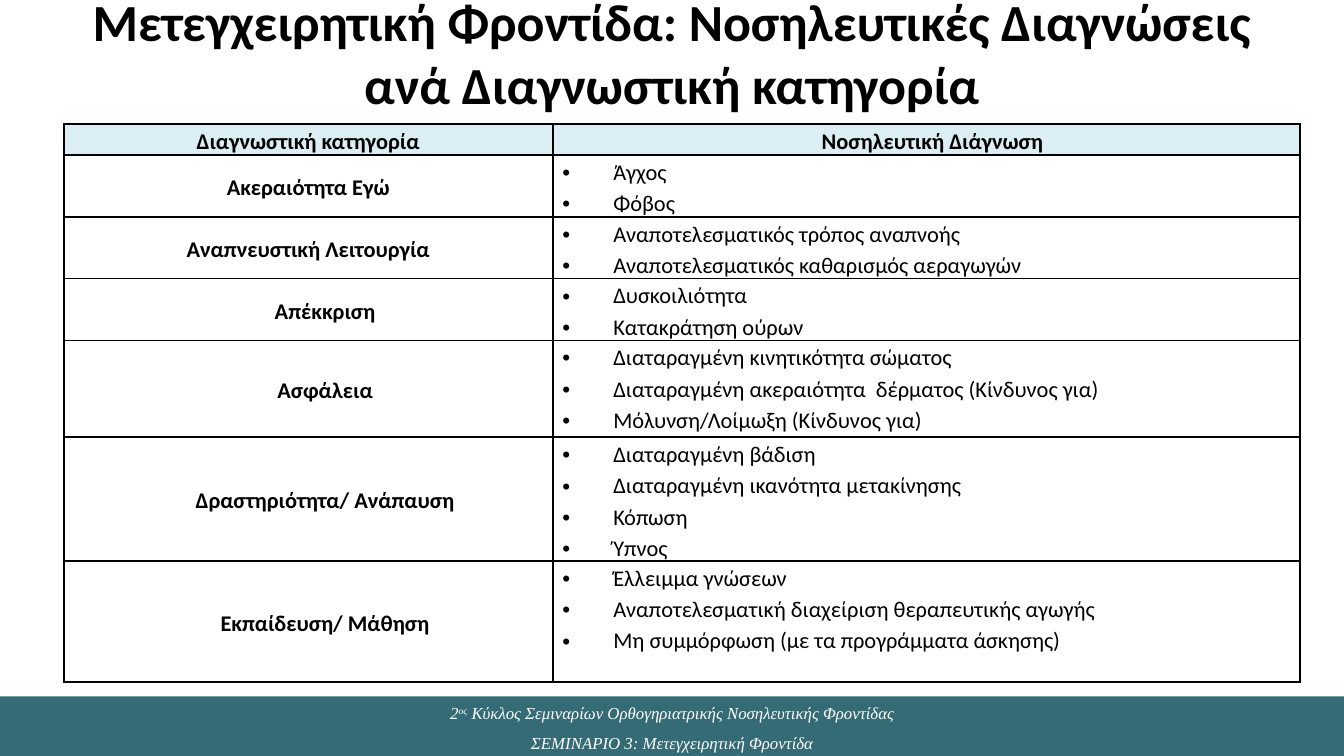
"""Build a slide of nursing diagnoses grouped by diagnostic category."""
from dataclasses import dataclass

from lxml import etree
from pptx import Presentation
from pptx.dml.color import RGBColor
from pptx.enum.shapes import MSO_SHAPE
from pptx.enum.text import MSO_ANCHOR, MSO_AUTO_SIZE, PP_ALIGN
from pptx.oxml.ns import qn
from pptx.util import Emu, Inches, Pt

CENTER, JUSTIFY = PP_ALIGN.CENTER, PP_ALIGN.JUSTIFY
TOP, MIDDLE, BOTTOM = MSO_ANCHOR.TOP, MSO_ANCHOR.MIDDLE, MSO_ANCHOR.BOTTOM
FIXED, GROW = MSO_AUTO_SIZE.NONE, MSO_AUTO_SIZE.SHAPE_TO_FIT_TEXT
RECTANGLE = MSO_SHAPE.RECTANGLE
WIDTH = Inches(10)
HEIGHT = Emu(WIDTH * 9 // 16)
BLACK, WHITE, TEAL, PALE_BLUE = "000000", "FFFFFF", "356B74", "DBEEF4"
COLUMNS = (3.64, 5.56)
HEADER_HEIGHT = 0.22
BULLET_INDENT, BULLET_TAB = 0.38, 0.59


@dataclass
class Category:
    """One table row: a category, its diagnoses and its layout."""
    name: str
    diagnoses: tuple[str, ...]
    height: float
    indent: float = 0.25
    space_after: float = 10


CATEGORIES = (
    Category("Ακεραιότητα Εγώ", ("Άγχος", "Φόβος"), 0.44, 0, 0),
    Category("Αναπνευστική Λειτουργία",
             ("Αναποτελεσματικός τρόπος αναπνοής",
              "Αναποτελεσματικός καθαρισμός αεραγωγών"), 0.44, 0, 0),
    Category("Απέκκριση", ("Δυσκοιλιότητα", "Κατακράτηση ούρων"), 0.44),
    Category("Ασφάλεια",
             ("Διαταραγμένη κινητικότητα σώματος",
              "Διαταραγμένη ακεραιότητα  δέρματος (Κίνδυνος για)",
              "Μόλυνση/Λοίμωξη (Κίνδυνος για)"), 0.72),
    Category("Δραστηριότητα/ Ανάπαυση",
             ("Διαταραγμένη βάδιση", "Διαταραγμένη ικανότητα μετακίνησης",
              "Κόπωση", "Ύπνος"), 0.89),
    Category("Εκπαίδευση/ Μάθηση",
             ("Έλλειμμα γνώσεων",
              "Αναποτελεσματική διαχείριση θεραπευτικής αγωγής",
              "Μη συμμόρφωση (με τα προγράμματα άσκησης)"), 0.9),
)


def color(value: str) -> RGBColor:
    """Turn a hex string into a colour."""
    return RGBColor.from_string(value)


def share(left: float, top: float, width: float, height: float) -> tuple[Emu, ...]:
    """Turn percentages of the slide's size into lengths."""
    return (Emu(round(WIDTH * left / 100)), Emu(round(HEIGHT * top / 100)),
            Emu(round(WIDTH * width / 100)), Emu(round(HEIGHT * height / 100)))


def style_spans(para, size: float, face: str, ink: str,
                bold: bool = False, italic: bool = False) -> None:
    """Format every run of a paragraph."""
    for span in para.runs:
        font = span.font
        font.size, font.name = Pt(size), face
        font.bold, font.italic = bold, italic
        font.color.rgb = color(ink)


def add_bullet(para) -> None:
    """Give a paragraph a hanging bullet and a tab stop."""
    properties = para._p.get_or_add_pPr()
    properties.set("marL", str(Inches(BULLET_INDENT)))
    properties.set("indent", str(-Inches(BULLET_INDENT)))
    etree.SubElement(properties, qn("a:buFont"), typeface="Arial")
    etree.SubElement(properties, qn("a:buChar"), char="•")
    tabs = etree.SubElement(properties, qn("a:tabLst"))
    etree.SubElement(tabs, qn("a:tab"), pos=str(Inches(BULLET_TAB)), algn="l")


def add_borders(cell) -> None:
    """Draw a thin black line on each side of a cell."""
    properties = cell._tc.get_or_add_tcPr()
    for side in ("lnL", "lnR", "lnT", "lnB"):
        line = etree.SubElement(properties, qn(f"a:{side}"), w=str(Pt(1)))
        fill = etree.SubElement(line, qn("a:solidFill"))
        etree.SubElement(fill, qn("a:srgbClr"), val=BLACK)


def fill_cell(cell, lines: tuple[str, ...], background: str = WHITE,
              anchor=TOP, bulleted: bool = False, indent: float = 0,
              space_after: float = 0) -> None:
    """Write and format the paragraphs of one table cell."""
    add_borders(cell)
    cell.fill.solid()
    cell.fill.fore_color.rgb = color(background)
    cell.margin_left = cell.margin_right = Inches(0.07)
    cell.margin_top = cell.margin_bottom = 0
    cell.vertical_anchor = anchor
    cell.text_frame.text = "\n".join(lines)
    for para in cell.text_frame.paragraphs:
        if bulleted:
            add_bullet(para)
        elif indent:
            para._p.get_or_add_pPr().set("marL", str(Inches(indent)))
        para.alignment = JUSTIFY if bulleted else CENTER
        para.line_spacing = 1.15
        if space_after:
            para.space_after = Pt(space_after)
        style_spans(para, 12, "Calibri", BLACK, bold=not bulleted)


def set_title(page) -> None:
    """Place and format the title placeholder."""
    title = page.shapes.title
    title.left, title.top, title.width, title.height = share(5, 4, 90, 16.7)
    frame = title.text_frame
    frame.text = "Μετεγχειρητική Φροντίδα: Νοσηλευτικές Διαγνώσεις ανά Διαγνωστική κατηγορία"
    frame.word_wrap, frame.auto_size = True, FIXED
    frame.vertical_anchor, frame.margin_bottom = BOTTOM, Inches(0.31)
    frame.margin_top = 0
    para = frame.paragraphs[0]
    para.alignment = CENTER
    style_spans(para, 27.9, "Calibri", BLACK, bold=True)


def add_footer(page) -> None:
    """Draw the footer band and its two lines."""
    band = page.shapes.add_shape(RECTANGLE, *share(0, 92.1, 100, 7.9))
    band.shadow.inherit = False
    band.fill.solid()
    band.fill.fore_color.rgb = color(TEAL)
    band.line.fill.background()
    box = page.shapes.add_textbox(*share(5.2, 90.7, 89.6, 10))
    frame = box.text_frame
    frame.word_wrap, frame.auto_size = True, GROW
    series = frame.paragraphs[0]
    for text in ("2", "ος", " Κύκλος Σεμιναρίων Ορθογηριατρικής Νοσηλευτικής Φροντίδας"):
        series.add_run().text = text
    series.runs[1]._r.get_or_add_rPr().set("baseline", "30000")
    frame.add_paragraph().text = "ΣΕΜΙΝΑΡΙΟ 3: Μετεγχειρητική Φροντίδα"
    for para in frame.paragraphs:
        para.alignment, para.line_spacing = CENTER, 1.5
        style_spans(para, 9, "Times New Roman", WHITE, italic=True)


def add_diagnoses(page) -> None:
    """Draw the table of categories and diagnoses."""
    heights = [HEADER_HEIGHT, *(category.height for category in CATEGORIES)]
    left, top, width, height = share(4.74, 16.4, 10 * sum(COLUMNS), 73.6)
    table = page.shapes.add_table(
        len(heights), len(COLUMNS), left, top, width, height).table
    table.first_row = table.horz_banding = False
    for column, column_width in zip(table.columns, COLUMNS):
        column.width = Inches(column_width)
    for row, row_height in zip(table.rows, heights):
        row.height = Inches(row_height)
    fill_cell(table.cell(0, 0), ("Διαγνωστική κατηγορία",), PALE_BLUE)
    fill_cell(table.cell(0, 1), ("Νοσηλευτική Διάγνωση",), PALE_BLUE, indent=0.09)
    for index, category in enumerate(CATEGORIES, start=1):
        fill_cell(table.cell(index, 0), (category.name,), anchor=MIDDLE,
                  indent=category.indent, space_after=category.space_after)
        fill_cell(table.cell(index, 1), category.diagnoses, bulleted=True)


def main() -> None:
    """Build and save the deck."""
    deck = Presentation()
    deck.slide_width, deck.slide_height = WIDTH, HEIGHT
    page = deck.slides.add_slide(deck.slide_layouts[5])
    set_title(page)
    add_footer(page)
    add_diagnoses(page)
    deck.save("out.pptx")


if __name__ == "__main__":
    main()
